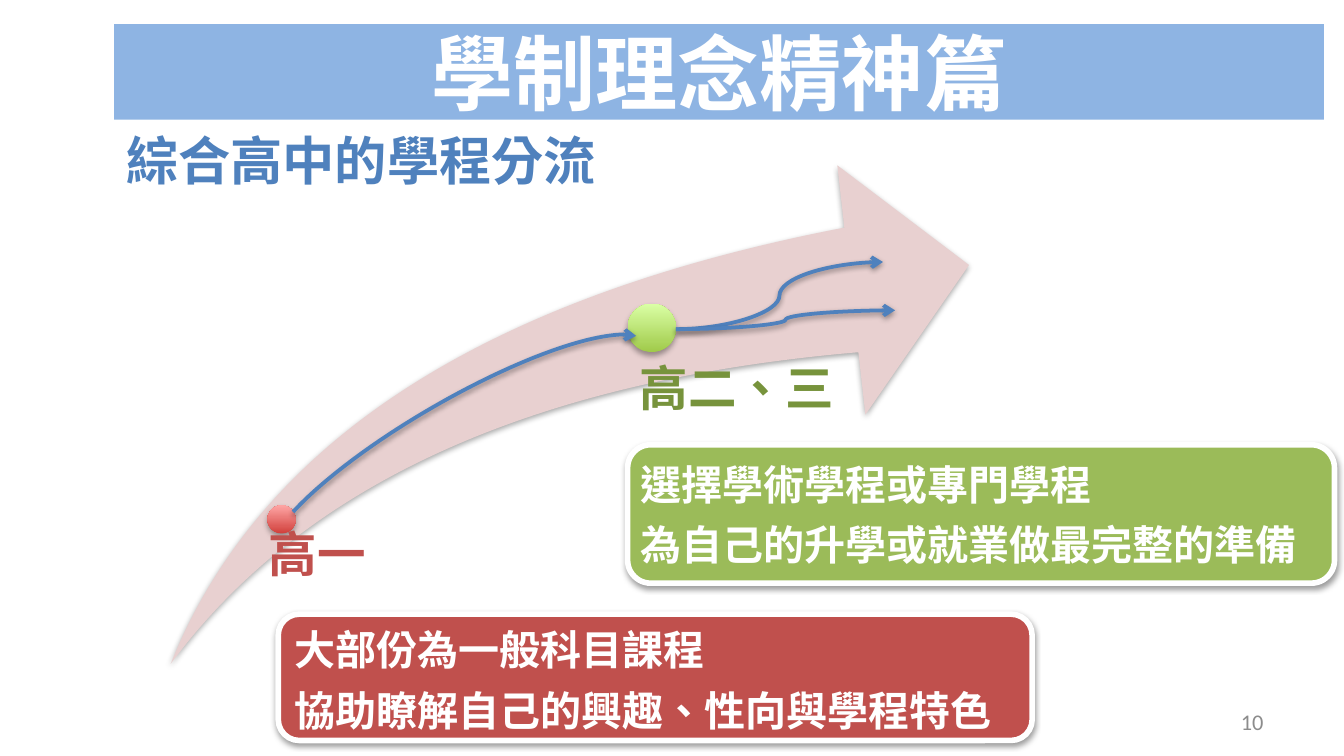
from lxml import etree
from pptx import Presentation
from pptx import util as u
from pptx.dml.color import RGBColor
from pptx.enum import lang, shapes, text
from pptx.oxml.ns import qn

THEME = {
    "cjk": "Noto Sans CJK SC", "latin": "Calibri",
    "white": "FFFFFF", "gray": "8C8C8C", "banner": "8EB4E3", "blue": "4F81BD",
    "red": "C0504D", "green": "9BBB59", "dark green": "77933C", "swoosh": "E8D0D0",
    "red dot": ("D1403C", "FFA6A5"), "green dot": ("A0CA4A", "DAFFA5"),
    "title": 44, "subtitle": 28, "stage": 26, "body": 22, "number": 12,
}
TITLE = "學制理念精神篇"
SUBTITLE = "綜合高中的學程分流"
PAGE_NUMBER = "10"
# fill, card frame, text frame, anchor, lines
CARDS = [
    ("red", (2.07, 4.57, 5.61, 0.94), (2.09, 4.6, 5.59, 0.93), "TOP",
     ["大部份為一般科目課程", "協助瞭解自己的興趣、性向與學程特色"]),
    ("green", (4.67, 3.31, 5.26, 1.03), (4.67, 3.36, 5.26, 0.93), "MIDDLE",
     ["選擇學術學程或專門學程", "為自己的升學或就業做最完整的準備"]),
]
# label, label colour, label frame, label indent, dot colours, dot frame
STAGES = [
    ("高一", "red", (1.89, 3.95, 1.93, 0.78), 0.11, "red dot", (1.99, 3.76, 0.21, 0.21)),
    ("高二、三", "dark green", (4.57, 2.71, 1.8, 0.66), 0.19, "green dot", (4.67, 2.26, 0.36, 0.36)),
]
SWOOSH = (1.27, 1.23, 5.94, 3.71)
FORK = (5.03, 2.45)
BRANCH_ENDS = [(6.57, 1.95), (6.66, 2.31)]
ARC = (1.78, 2.98, 3.27, 0.8)


def color(name):
    return RGBColor.from_string(THEME[name])


def inches(values):
    return [u.Inches(value) for value in values]


def write(box, lines, size, fill, font="cjk", bold=True, anchor="MIDDLE",
          align="LEFT", insets=(0.1, 0.05, 0.1, 0.05), gap=0, spacing=None):
    frame = box.text_frame
    frame.word_wrap = True
    frame.auto_size = text.MSO_AUTO_SIZE.NONE
    frame.vertical_anchor = text.MSO_ANCHOR[anchor]
    (frame.margin_left, frame.margin_top,
     frame.margin_right, frame.margin_bottom) = inches(insets)
    for index, line in enumerate(lines):
        para = frame.add_paragraph() if index else frame.paragraphs[0]
        para.alignment = text.PP_ALIGN[align]
        para.space_before = u.Pt(gap if index else 0)
        if spacing:
            para.line_spacing = spacing
        span = para.add_run()
        span.text = line
        span.font.name = THEME[font]
        span.font.size = u.Pt(THEME[size])
        span.font.bold = bold
        span.font.color.rgb = color(fill)
        span.font.language_id = lang.MSO_LANGUAGE_ID.TRADITIONAL_CHINESE


def add_label(page, frame, lines, size, fill, **options):
    write(page.shapes.add_textbox(*inches(frame)), lines, size, fill, **options)


def add_shadow(shape, opacity, distance):
    """Soft shadow straight below the shape."""
    properties = shape.element.spPr
    effects = etree.SubElement(properties, qn("a:effectLst"))
    shadow = etree.SubElement(
        effects, qn("a:outerShdw"), blurRad=str(u.Pt(3.1)), dist=str(u.Pt(distance)),
        dir="5400000", rotWithShape="0")
    tint = etree.SubElement(shadow, qn("a:srgbClr"), val="000000")
    etree.SubElement(tint, qn("a:alpha"), val=str(opacity * 1000))


def add_solid(page, kind, frame, fill):
    shape = page.shapes.add_shape(shapes.MSO_SHAPE[kind], *inches(frame))
    shape.fill.solid()
    shape.fill.fore_color.rgb = color(fill)
    shape.line.fill.background()
    return shape


def add_dot(page, frame, stops):
    dot = page.shapes.add_shape(shapes.MSO_SHAPE.OVAL, *inches(frame))
    dot.fill.gradient()
    dot.fill.gradient_angle = 90
    for position, (stop, shade) in enumerate(zip(dot.fill.gradient_stops, stops)):
        stop.color.rgb = RGBColor.from_string(shade)
        stop.position = position
    dot.line.fill.background()
    add_shadow(dot, 35, 1.8)


def style_curve(curve):
    curve.line.color.rgb = color("blue")
    curve.line.width = u.Pt(2)
    outline = curve.element.spPr.find(qn("a:ln"))
    etree.SubElement(outline, qn("a:tailEnd"), type="arrow")
    add_shadow(curve, 38, 1.6)


def main():
    deck = Presentation()
    deck.slide_width = u.Inches(10)
    deck.slide_height = deck.slide_width * 9 // 16
    page = deck.slides.add_slide(deck.slide_layouts[5])

    add_label(page, (7.17, 5.22, 2.33, 0.3), [PAGE_NUMBER], "number", "gray",
              font="latin", bold=False, align="RIGHT")
    banner = page.shapes.title
    banner.left, banner.top, banner.width, banner.height = inches((0.85, 0.18, 9, 0.71))
    banner.fill.solid()
    banner.fill.fore_color.rgb = color("banner")
    write(banner, [TITLE], "title", "white", align="CENTER")
    add_label(page, (0.84, 0.89, 3.72, 0.59), [SUBTITLE], "subtitle", "blue", font="latin")

    for fill, frame, text_frame, anchor, lines in CARDS:
        card = add_solid(page, "ROUNDED_RECTANGLE", frame, fill)
        card.line.color.rgb = color("white")
        card.line.width = u.Pt(3)
        add_shadow(card, 38, 1.6)
        add_label(page, text_frame, lines, "body", "white", anchor=anchor, gap=6)

    swoosh = add_solid(page, "SWOOSH_ARROW", SWOOSH, "swoosh")
    swoosh.adjustments[0] = swoosh.adjustments[1] = 0.25
    add_shadow(swoosh, 35, 1.8)

    for label, fill, frame, indent, stops, dot_frame in STAGES:
        add_dot(page, dot_frame, THEME[stops])
        add_label(page, frame, [label], "stage", fill, anchor="TOP",
                  insets=(indent, 0, 0, 0), spacing=0.9)

    for end in BRANCH_ENDS:
        style_curve(page.shapes.add_connector(
            shapes.MSO_CONNECTOR.CURVE, *inches(FORK + end)))

    arc = page.shapes.add_shape(shapes.MSO_SHAPE.ARC, *inches(ARC))
    # The preset stores angles in 60000ths of a degree
    arc.adjustments[0], arc.adjustments[1] = (angle * 0.6 for angle in (190.93, 356.36))
    arc.rotation = 329.9
    arc.fill.background()
    style_curve(arc)

    deck.save("out.pptx")


if __name__ == "__main__":
    main()
